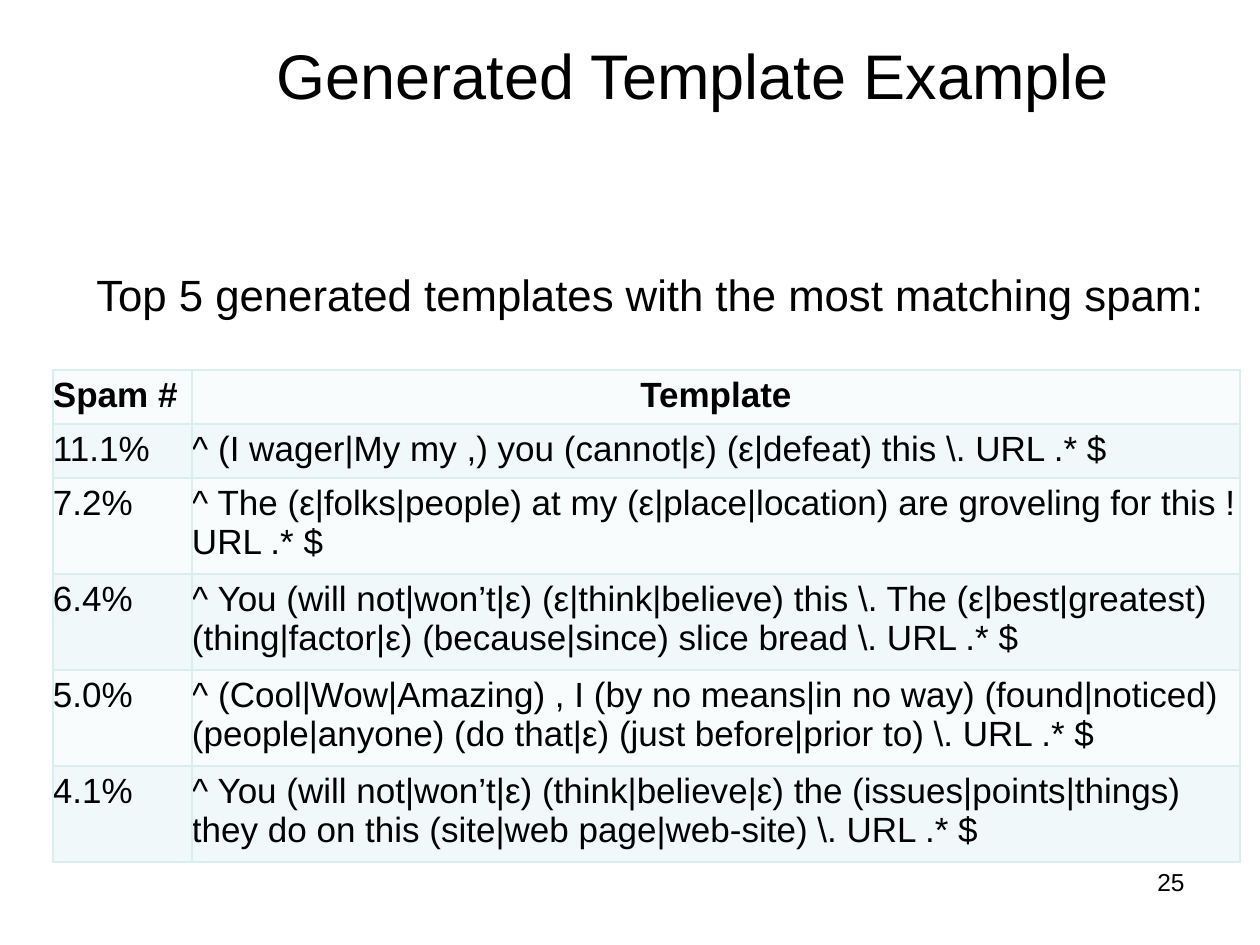
from pptx import Presentation
from pptx.dml.color import RGBColor
from pptx.enum.text import MSO_ANCHOR, PP_ALIGN
from pptx.oxml import parse_xml
from pptx.oxml.ns import nsdecls
from pptx.util import Pt

# Content
TITLE = "Generated Template Example"
LEAD = "Top 5 generated templates with the most matching spam:"
PAGE = "25"
ROWS = [
    ("Spam #", "Template"),
    ("11.1%", "^ (I wager|My my ,) you (cannot|ε) (ε|defeat) this \\. URL .* $"),
    ("7.2%", "^ The (ε|folks|people) at my (ε|place|location) are groveling "
             "for this ! URL .* $"),
    ("6.4%", "^ You (will not|won’t|ε) (ε|think|believe) this \\. The "
             "(ε|best|greatest) (thing|factor|ε) (because|since) slice bread "
             "\\. URL .* $"),
    ("5.0%", "^ (Cool|Wow|Amazing) , I (by no means|in no way) (found|noticed) "
             "(people|anyone) (do that|ε) (just before|prior to) \\. URL .* $"),
    ("4.1%", "^ You (will not|won’t|ε) (think|believe|ε) the "
             "(issues|points|things) they do on this "
             "(site|web page|web-site) \\. URL .* $"),
]

# Layout in px, 126 to the inch
SCALE = 914400 // 126
COLS = (139, 1048)
LEFT, TOP = 53, 370
ONE, TWO = 51, 91  # heights of one-line and two-line rows
PAD = 6

BLACK = RGBColor(0x00, 0x00, 0x00)
PALE = RGBColor(0xF8, 0xFC, 0xFC)
TINT = RGBColor(0xF1, 0xF8, 0xF9)
EDGE = RGBColor(0xDA, 0xED, 0xEF)


def px(n):
    return n * SCALE


def write(para, text, size, align=PP_ALIGN.LEFT, bold=False):
    para.alignment = align
    run = para.add_run()
    run.text = text
    font = run.font
    font.name, font.size, font.bold = "Arial", Pt(size), bold
    font.color.rgb = BLACK


def add_text(slide, box, text, size, align=PP_ALIGN.LEFT, anchor=MSO_ANCHOR.TOP):
    frame = slide.shapes.add_textbox(*map(px, box)).text_frame
    frame.word_wrap = True
    frame.vertical_anchor = anchor
    para = frame.paragraphs[0]
    write(para, text, size, align)
    return para


def add_edges(cell):
    props = cell._tc.get_or_add_tcPr()
    for i, side in enumerate(("lnL", "lnR", "lnT", "lnB")):
        props.insert(i, parse_xml(
            f'<a:{side} {nsdecls("a")} w="{Pt(1)}"><a:solidFill>'
            f'<a:srgbClr val="{EDGE}"/></a:solidFill></a:{side}>'))


def add_grid(slide):
    highs = [ONE if i < 2 else TWO for i in range(len(ROWS))]
    table = slide.shapes.add_table(
        len(ROWS), len(COLS), px(LEFT), px(TOP), px(sum(COLS)), px(sum(highs))).table
    for col, wide in zip(table.columns, COLS):
        col.width = px(wide)
    for r, (row, high) in enumerate(zip(ROWS, highs)):
        table.rows[r].height = px(high)
        for c, text in enumerate(row):
            cell = table.cell(r, c)
            cell.margin_left = cell.margin_right = 0
            cell.margin_top = cell.margin_bottom = px(PAD)
            cell.fill.solid()
            cell.fill.fore_color.rgb = TINT if r % 2 else PALE
            add_edges(cell)
            head = r == 0
            align = PP_ALIGN.CENTER if head and c else PP_ALIGN.LEFT
            write(cell.text_frame.paragraphs[0], text, 20, align, head)


def main():
    deck = Presentation()
    deck.slide_width, deck.slide_height = px(1260), px(945)
    slide = deck.slides.add_slide(deck.slide_layouts[6])

    # Page number, lead line and title
    add_text(slide, (903, 861, 294, 66), PAGE, 14, PP_ALIGN.RIGHT)
    add_text(slide, (84, 262, 1134, 147), LEAD, 25)
    title = add_text(slide, (126, 0, 1134, 158), TITLE, 36,
                     PP_ALIGN.CENTER, MSO_ANCHOR.MIDDLE)
    title.line_spacing = 0.9

    # Template table
    add_grid(slide)
    deck.save("out.pptx")


if __name__ == "__main__":
    main()
